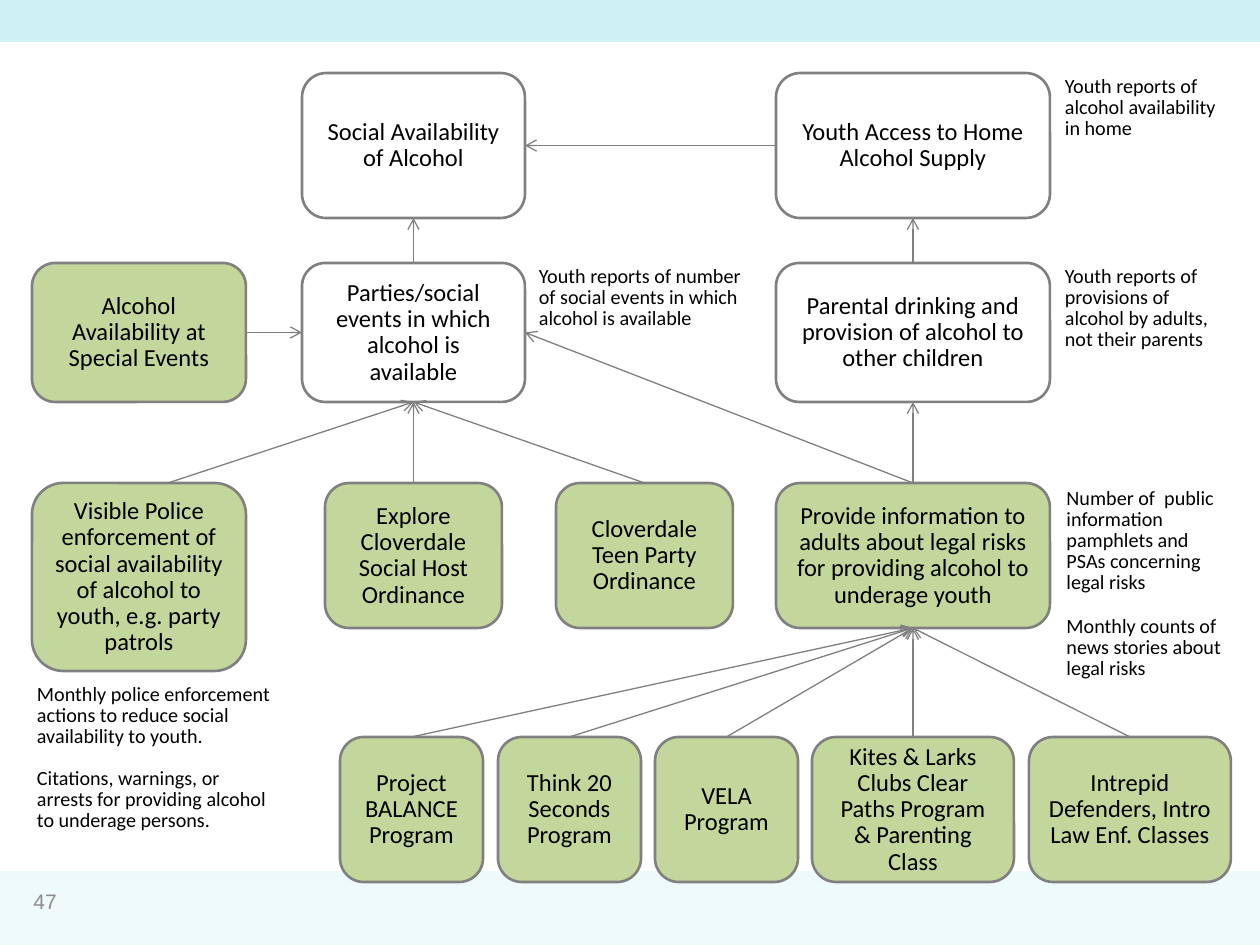
from lxml.etree import SubElement
from pptx import Presentation
from pptx.dml.color import RGBColor
from pptx.enum.shapes import MSO_CONNECTOR, MSO_SHAPE
from pptx.enum.text import MSO_ANCHOR, PP_ALIGN
from pptx.oxml.ns import qn
from pptx.util import Emu, Pt

EMU_PER_PX = 914400 / 126
COLORS = {
    "top": "CEF1F4",
    "bottom": "EFFAFB",
    "panel": "FFFFFF",
    "factor": "FFFFFF",
    "program": "C3D69B",
    "outline": "808080",
    "text": "000000",
    "number": "8C8C8C",
}
TOP, LEFT, BOTTOM, RIGHT = range(4)

ROWS = [73, 263, 483, 737]
BOX_HEIGHTS = [145, 139, 145, 145]
NOTE_X, NOTE_WIDTH = 1061, 170
LEFT_X, LEFT_WIDTH = 32, 214
SOCIAL_X, SOCIAL_WIDTH = 302, 223
ADULT_X, ADULT_WIDTH = 776, 274

BOXES = [
    ("social", "factor", 0, SOCIAL_X, SOCIAL_WIDTH, "Social Availability of Alcohol"),
    ("home", "factor", 0, ADULT_X, ADULT_WIDTH, "Youth Access to Home Alcohol Supply"),
    ("special", "program", 1, LEFT_X, LEFT_WIDTH, "Alcohol Availability at Special Events"),
    ("parties", "factor", 1, SOCIAL_X, SOCIAL_WIDTH,
     "Parties/social events in which alcohol is available"),
    ("parents", "factor", 1, ADULT_X, ADULT_WIDTH,
     "Parental drinking and provision of alcohol to other children"),
    ("police", "program", 2, LEFT_X, LEFT_WIDTH,
     "Visible Police enforcement of social availability of alcohol to youth, e.g. party patrols"),
    ("host", "program", 2, 325, 177, "Explore Cloverdale Social Host Ordinance"),
    ("teen", "program", 2, 556, 177, "Cloverdale Teen Party Ordinance"),
    ("inform", "program", 2, ADULT_X, ADULT_WIDTH,
     "Provide information to adults about legal risks for providing alcohol to underage youth"),
    ("balance", "program", 3, 340, 143, "Project BALANCE Program"),
    ("seconds", "program", 3, 498, 143, "Think 20 Seconds Program"),
    ("vela", "program", 3, 655, 143, "VELA Program"),
    ("clubs", "program", 3, 812, 202, "Kites & Larks Clubs Clear Paths Program & Parenting Class"),
    ("defenders", "program", 3, 1029, 202, "Intrepid Defenders, Intro Law Enf. Classes"),
]
TALL_BOXES = {"police": 188}

NOTES = [
    (LEFT_X, 680, 249, 103,
     "Monthly police enforcement actions to reduce social availability to youth."),
    (LEFT_X, 764, 249, 103,
     "Citations, warnings, or arrests for providing alcohol to underage persons."),
    (535, ROWS[1], 217, 81,
     "Youth reports of number of social events in which alcohol is available"),
    (NOTE_X, ROWS[0], NOTE_WIDTH, 81, "Youth reports of alcohol availability in home"),
    (NOTE_X, ROWS[1], NOTE_WIDTH, 81,
     "Youth reports of provisions of alcohol by adults, not their parents"),
    (NOTE_X, ROWS[2], NOTE_WIDTH, 113,
     "Number of  public information pamphlets and PSAs concerning legal risks"),
    (NOTE_X, 611, NOTE_WIDTH, 113, "Monthly counts of news stories about legal risks"),
]

ARROWS = [
    ("special", RIGHT, "parties", LEFT),
    ("home", LEFT, "social", RIGHT),
    ("inform", TOP, "parties", RIGHT),
] + [
    (start, TOP, end, BOTTOM)
    for end, starts in {
        "social": ["parties"],
        "home": ["parents"],
        "parents": ["inform"],
        "parties": ["host", "teen"],
        "inform": ["balance", "seconds", "vela", "clubs", "defenders"],
    }.items()
    for start in starts
]


def px(length):
    return Emu(round(length * EMU_PER_PX))


def color(name):
    return RGBColor.from_string(COLORS[name])


def paint_background(page):
    fill = page.background.fill
    fill.gradient()
    fill.gradient_angle = 270
    for stop, name in zip(fill.gradient_stops, ("top", "bottom")):
        stop.color.rgb = color(name)


def add_block(page, kind, bounds, fill=None):
    block = page.shapes.add_shape(kind, *map(px, bounds))
    block.shadow.inherit = False
    block.line.fill.background()
    if fill:
        block.fill.solid()
        block.fill.fore_color.rgb = color(fill)
    else:
        block.fill.background()
    return block


def write_text(block, text, size, font="Calibri", tone="text", spacing=None,
               align=PP_ALIGN.LEFT, anchor=MSO_ANCHOR.MIDDLE):
    frame = block.text_frame
    frame.word_wrap = True
    frame.vertical_anchor = anchor
    paragraph = frame.paragraphs[0]
    paragraph.text = text
    paragraph.alignment = align
    if spacing:
        paragraph.line_spacing = Pt(spacing)
    paragraph.font.name = font
    paragraph.font.size = Pt(size)
    paragraph.font.color.rgb = color(tone)


def add_box(page, bounds, fill, text):
    box = add_block(page, MSO_SHAPE.ROUNDED_RECTANGLE, bounds, fill)
    box.line.color.rgb = color("outline")
    box.line.width = Pt(1.5)
    write_text(box, text, 14, spacing=15, align=PP_ALIGN.CENTER)
    return box


def add_note(page, bounds, text):
    note = add_block(page, MSO_SHAPE.ROUNDED_RECTANGLE, bounds)
    frame = note.text_frame
    frame.margin_left = frame.margin_right = frame.margin_top = frame.margin_bottom = 0
    write_text(note, text, 11.5, spacing=12, anchor=MSO_ANCHOR.TOP)


def add_arrow(page, x, y, end, end_site):
    arrow = page.shapes.add_connector(MSO_CONNECTOR.STRAIGHT, px(x), px(y), px(x), px(y))
    arrow.end_connect(end, end_site)
    arrow.line.color.rgb = color("outline")
    arrow.line.width = Pt(0.75)
    SubElement(arrow.line._get_or_add_ln(), qn("a:tailEnd"), type="arrow")
    SubElement(arrow._element.spPr, qn("a:effectLst"))
    return arrow


def main():
    deck = Presentation()
    deck.slide_width, deck.slide_height = px(1260), px(945)
    page = deck.slides.add_slide(deck.slide_layouts[6])
    paint_background(page)

    number = page.shapes.add_textbox(px(21), px(876), px(294), px(50))
    write_text(number, "47", 12, font="Arial", tone="number")
    add_block(page, MSO_SHAPE.RECTANGLE, (0, 42, 1260, 829), "panel")

    boxes = {}
    for name, fill, row, x, width, text in BOXES:
        height = TALL_BOXES.get(name, BOX_HEIGHTS[row])
        boxes[name] = add_box(page, (x, ROWS[row], width, height), fill, text)

    for start, start_site, end, end_site in ARROWS:
        arrow = add_arrow(page, 0, 0, boxes[end], end_site)
        arrow.begin_connect(boxes[start], start_site)
    add_arrow(page, 168, ROWS[2], boxes["parties"], BOTTOM)

    for *bounds, text in NOTES:
        add_note(page, bounds, text)

    deck.save("out.pptx")


if __name__ == "__main__":
    main()
